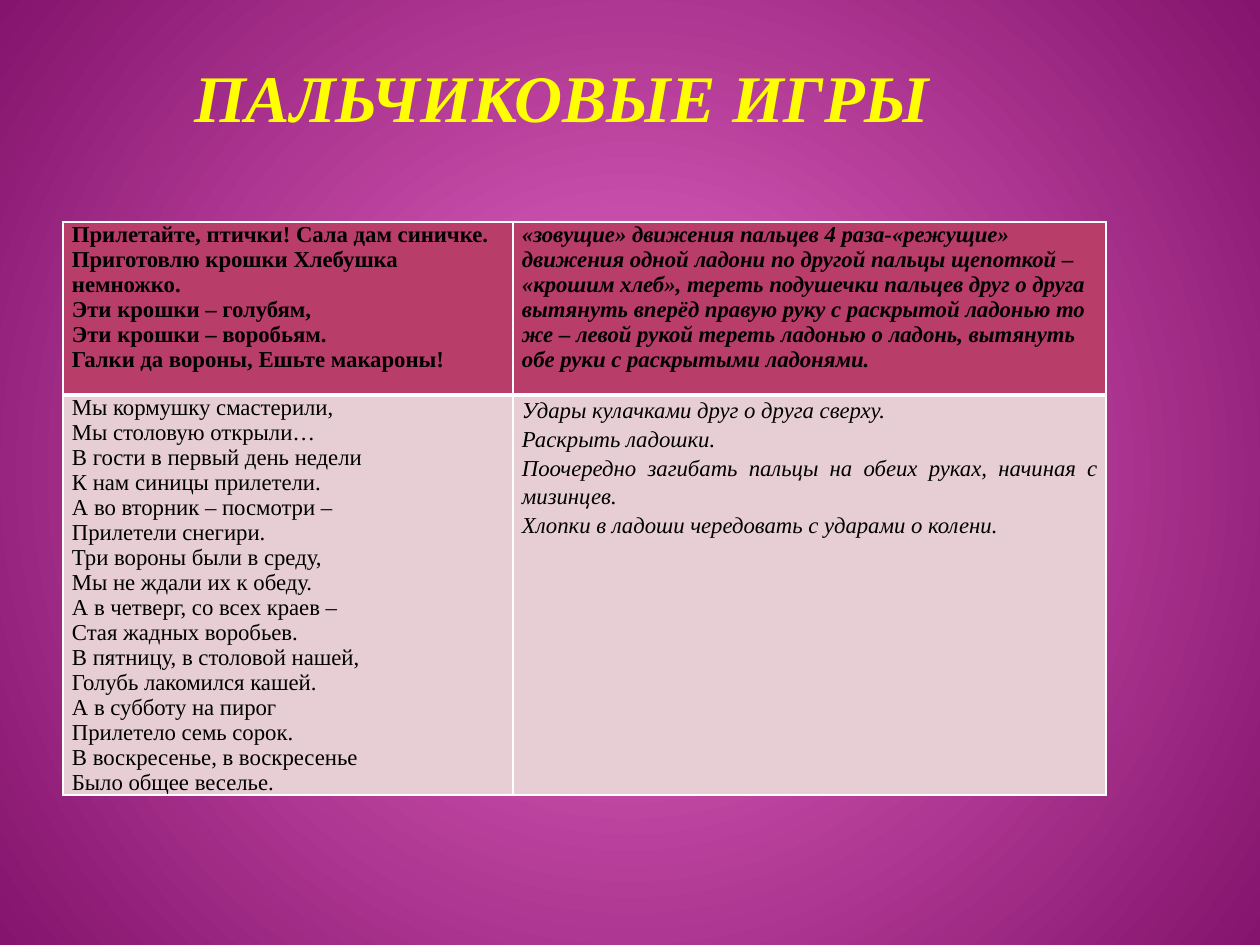
from lxml.etree import SubElement
from pptx import Presentation
from pptx.dml.color import RGBColor
from pptx.enum.text import MSO_ANCHOR, MSO_AUTO_SIZE, PP_ALIGN
from pptx.oxml.ns import qn
from pptx.util import Emu, Pt

FONT = "Times New Roman"


def px(value):
    return Emu(round(value * 914400 / 126))


def color(value):
    return RGBColor.from_string(value)


presentation = Presentation()
presentation.slide_width = px(1260)
presentation.slide_height = px(945)
slide = presentation.slides.add_slide(presentation.slide_layouts[5])

background = slide.background.fill
background.gradient()
for stop, value in zip(background.gradient_stops, ["E869C7", "84146D"]):
    stop.color.rgb = color(value)
gradient = slide.background._cSld.find(".//" + qn("a:gradFill"))
gradient.remove(gradient.find(qn("a:lin")))
path = SubElement(gradient, qn("a:path"), path="circle")
SubElement(path, qn("a:fillToRect"), l="50000", t="50000", r="50000", b="50000")

title = slide.shapes.title
title.left, title.top, title.width, title.height = px(63), px(26), px(998), px(110)
frame = title.text_frame
frame.auto_size = MSO_AUTO_SIZE.NONE
frame.vertical_anchor = MSO_ANCHOR.BOTTOM
frame.margin_left = frame.margin_right = px(6)
frame.margin_top = frame.margin_bottom = 0
paragraph = frame.paragraphs[0]
paragraph.alignment = PP_ALIGN.CENTER
run = paragraph.add_run()
run.text = "ПАЛЬЧИКОВЫЕ ИГРЫ"
run.font.name = FONT
run.font.size = Pt(38)
run.font.bold = run.font.italic = True
run.font.color.rgb = color("FFFF00")

rows = [
    [
        [
            "Прилетайте, птички! Сала дам синичке.\n"
            "Приготовлю крошки Хлебушка немножко.\n"
            "Эти крошки – голубям,\n"
            "Эти крошки – воробьям.\n"
            "Галки да вороны, Ешьте макароны!"
        ],
        [
            "«зовущие» движения пальцев 4 раза-«режущие» движения одной ладони "
            "по другой пальцы щепоткой – «крошим хлеб», тереть подушечки пальцев "
            "друг о друга вытянуть вперёд правую руку с раскрытой ладонью то же – "
            "левой рукой тереть ладонью о ладонь, вытянуть обе руки с раскрытыми "
            "ладонями."
        ],
    ],
    [
        [
            "Мы кормушку смастерили,",
            "Мы столовую открыли…",
            "В гости в первый день недели",
            "К нам синицы прилетели.",
            "А во вторник – посмотри –",
            "Прилетели снегири.",
            "Три вороны были в среду,",
            "Мы не ждали их к обеду.",
            "А в четверг, со всех краев –",
            "Стая жадных воробьев.",
            "В пятницу, в столовой нашей,",
            "Голубь лакомился кашей.",
            "А в субботу на пирог",
            "Прилетело семь сорок.",
            "В воскресенье, в воскресенье",
            "Было общее веселье.",
        ],
        [
            "Удары кулачками друг о друга сверху.",
            "Раскрыть ладошки.",
            "Поочередно загибать пальцы на обеих руках, начиная с мизинцев.",
            "Хлопки в ладоши чередовать с ударами о колени.",
        ],
    ],
]
fills = ["B83D68", "E6CED4"]
borders = [
    {"lnL": 1, "lnR": 1, "lnT": 1, "lnB": 3},
    {"lnL": 1, "lnR": 1, "lnT": 3, "lnB": 1},
]

table = slide.shapes.add_table(2, 2, px(63), px(222), px(1043), px(573)).table
for column, width in zip(table.columns, [450, 593]):
    column.width = px(width)
for row, height in zip(table.rows, [173, 400]):
    row.height = px(height)

for row_index, row in enumerate(rows):
    for column_index, texts in enumerate(row):
        cell = table.cell(row_index, column_index)
        cell.margin_left = cell.margin_right = px(9)
        cell.margin_top = cell.margin_bottom = 0
        properties = cell._tc.get_or_add_tcPr()
        for side, width in borders[row_index].items():
            line = SubElement(properties, qn(f"a:{side}"), w=str(Pt(width)))
            SubElement(SubElement(line, qn("a:solidFill")), qn("a:srgbClr"), val="FFFFFF")
        cell.fill.solid()
        cell.fill.fore_color.rgb = color(fills[row_index])
        for index, text in enumerate(texts):
            frame = cell.text_frame
            paragraph = frame.add_paragraph() if index else frame.paragraphs[0]
            if row_index == 1 and column_index == 1:
                paragraph.alignment = PP_ALIGN.JUSTIFY
                paragraph.line_spacing = 1.15
            for line_index, line_text in enumerate(text.split("\n")):
                if line_index:
                    paragraph.add_line_break()
                run = paragraph.add_run()
                run.text = line_text
                run.font.name = FONT
                run.font.size = Pt(13)
                run.font.bold = row_index == 0
                run.font.italic = column_index == 1
                run.font.color.rgb = color("000000")

presentation.save("out.pptx")
